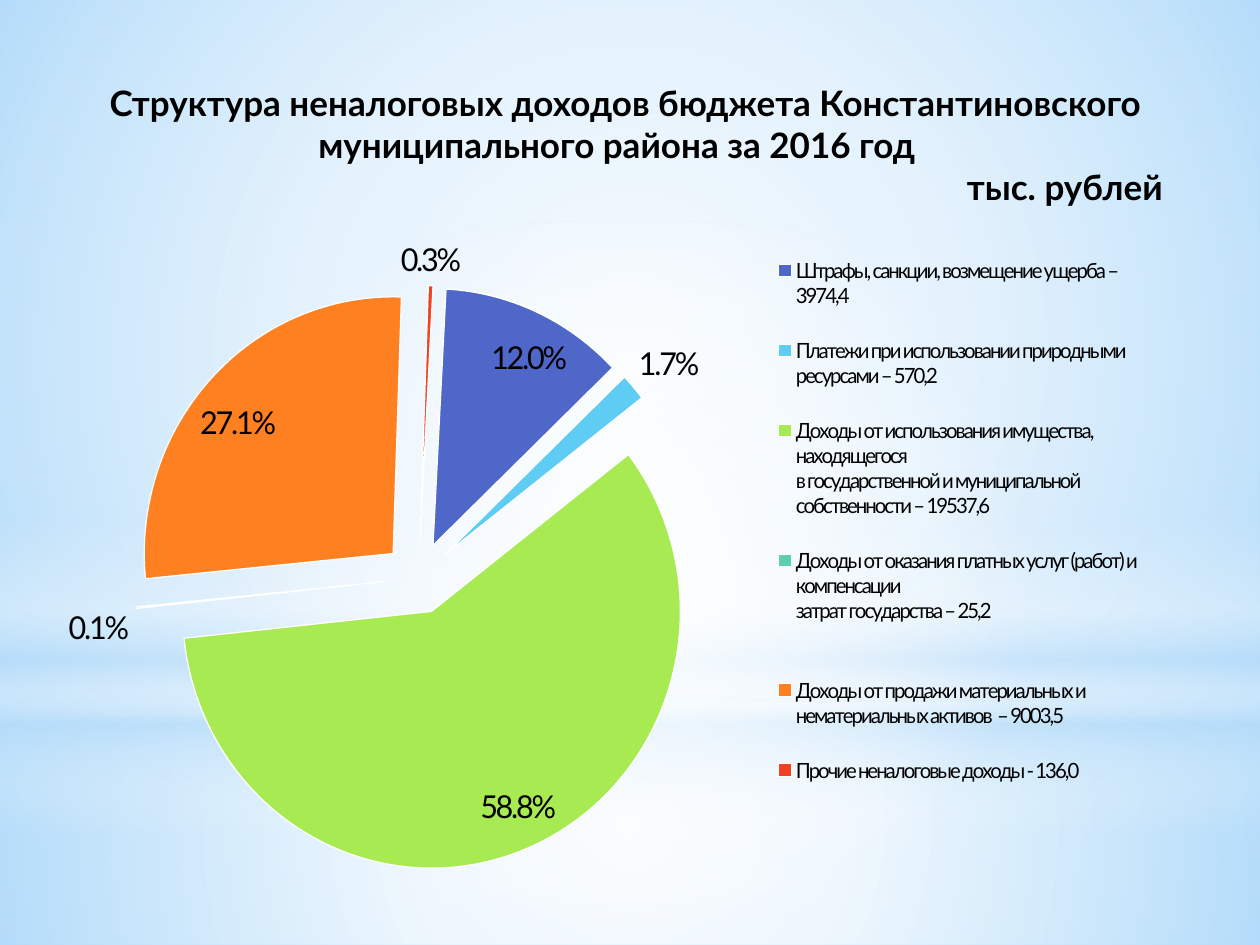
from lxml.etree import SubElement
from pptx import Presentation
from pptx.chart.data import CategoryChartData
from pptx.dml.color import RGBColor
from pptx.enum.chart import XL_CHART_TYPE, XL_LABEL_POSITION, XL_LEGEND_POSITION
from pptx.enum.shapes import MSO_SHAPE
from pptx.enum.text import MSO_ANCHOR, PP_ALIGN
from pptx.oxml import parse_xml
from pptx.oxml.ns import nsdecls, qn
from pptx.util import Pt

BLACK = RGBColor(0x00, 0x00, 0x00)
WHITE = RGBColor(0xFF, 0xFF, 0xFF)
SKY = RGBColor(0xB4, 0xDC, 0xFA)
INDIGO = RGBColor(0x4E, 0x67, 0xC8)
CYAN = RGBColor(0x5E, 0xCC, 0xF3)
LIME = RGBColor(0xA7, 0xEA, 0x52)
TEAL = RGBColor(0x5D, 0xCE, 0xAF)
ORANGE = RGBColor(0xFF, 0x80, 0x21)
RED = RGBColor(0xF1, 0x41, 0x24)

CIRCLE = ('<a:path path="circle"><a:fillToRect l="50000" t="50000" '
          'r="50000" b="50000"/></a:path>')
VERTICAL = '<a:lin ang="5400000" scaled="0"/>'

BACKDROP = [
    (MSO_SHAPE.RECTANGLE, (0, 401.76, 720, 138.24), CIRCLE,
     [(0, WHITE, 91), (37, WHITE, 76), (100, SKY, 79)]),
    (MSO_SHAPE.RECTANGLE, (0, 0, 720, 401.76), CIRCLE,
     [(0, WHITE, 89), (48, WHITE, 62), (100, SKY, 79)]),
    (MSO_SHAPE.RECTANGLE, (0, 296.64, 720, 180), VERTICAL,
     [(0, WHITE, 0), (29, WHITE, 30), (45, SKY, 40),
      (55, WHITE, 26), (65, SKY, 60), (100, WHITE, 0)]),
    (MSO_SHAPE.OVAL, (0, 126, 720, 401.76), CIRCLE,
     [(0, WHITE, 100), (56, WHITE, 0)]),
]

TITLE = [
    ("Структура неналоговых доходов бюджета Константиновского "
     "муниципального района за 2016 год  ", PP_ALIGN.CENTER),
    ("тыс. рублей", PP_ALIGN.RIGHT),
]

INCOME = [
    ("Штрафы, санкции, возмещение ущерба – 3974,4", 12, INDIGO),
    ("Платежи при использовании природными ресурсами – 570,2 ", 1.7, CYAN),
    ("Доходы от использования имущества, находящегося\n"
     "в государственной и муниципальной собственности – 19537,6 ", 58.8, LIME),
    ("Доходы от оказания платных услуг (работ) и компенсации\n"
     "затрат государства – 25,2 \n", 0.1, TEAL),
    ("Доходы от продажи материальных и нематериальных активов  – 9003,5 ",
     27.1, ORANGE),
    ("Прочие неналоговые доходы - 136,0", 0.3, RED),
]


def assign(target, values):
    for name, value in values.items():
        setattr(target, name, value)


def manual_layout(x, y, w, h, inner=False):
    target = '<c:layoutTarget val="inner"/>' if inner else ""
    modes = '<c:xMode val="edge"/><c:yMode val="edge"/>'
    sizes = "".join(f'<c:{key} val="{value}"/>'
                    for key, value in zip("xywh", (x, y, w, h)))
    return parse_xml(f'<c:layout {nsdecls("c")}><c:manualLayout>'
                     f'{target}{modes}{sizes}</c:manualLayout></c:layout>')


def replace_layout(parent, layout, index):
    for old in parent.findall(qn("c:layout")):
        parent.remove(old)
    parent.insert(index, layout)


class SlideBuilder:
    def __init__(self, slide, font_name):
        self.slide = slide
        self.font_name = font_name

    def style(self, font, size, spacing=None, **extra):
        assign(font, {"name": self.font_name, "size": Pt(size), **extra})
        font.color.rgb = BLACK
        if spacing is not None:
            font._rPr.set("spc", str(spacing))

    def glow(self, kind, place, direction, stops):
        shape = self.slide.shapes.add_shape(kind, *map(Pt, place))
        shape.shadow.inherit = False
        shape.line.fill.background()
        marks = "".join(
            f'<a:gs pos="{position * 1000}"><a:srgbClr val="{color}">'
            f'<a:alpha val="{opacity * 1000}"/></a:srgbClr></a:gs>'
            for position, color, opacity in stops)
        gradient = parse_xml(f'<a:gradFill {nsdecls("a")} rotWithShape="1">'
                             f'<a:gsLst>{marks}</a:gsLst>{direction}</a:gradFill>')
        shape._element.spPr.find(qn("a:prstGeom")).addnext(gradient)

    def title(self, lines, place):
        box = self.slide.shapes.title
        self.slide.shapes._spTree.append(box._element)
        assign(box, dict(zip(("left", "top", "width", "height"), map(Pt, place))))
        frame = box.text_frame
        assign(frame, {"word_wrap": True, "vertical_anchor": MSO_ANCHOR.TOP,
                       "margin_left": Pt(36), "margin_right": Pt(36),
                       "margin_top": Pt(3.6), "margin_bottom": Pt(3.6)})
        frame.text = "\n".join(text for text, _ in lines)
        for para, (_, alignment) in zip(frame.paragraphs, lines):
            assign(para, {"alignment": alignment, "line_spacing": 1.0,
                          "space_before": Pt(0), "space_after": Pt(0)})
            for span in para.runs:
                self.style(span.font, 20, bold=True)

    def pie(self, rows, place):
        data = CategoryChartData()
        data.categories = [name for name, _, _ in rows]
        data.add_series("Series 1", [value for _, value, _ in rows])
        chart = self.slide.shapes.add_chart(
            XL_CHART_TYPE.PIE, *map(Pt, place), data).chart
        assign(chart, {"has_title": False, "has_legend": True})
        self.style(chart.font, 18)

        legend = chart.legend
        assign(legend, {"position": XL_LEGEND_POSITION.RIGHT,
                        "include_in_layout": False})
        self.style(legend.font, 12, spacing=-115)
        replace_layout(legend._element, manual_layout(0.64, 0.02, 0.33, 0.86), 1)

        plot = chart.plots[0]
        plot.vary_by_categories = True
        replace_layout(plot._element.getparent(),
                       manual_layout(0.08, 0.09, 0.5, 0.89, inner=True), 0)
        series = plot.series[0]
        series.format.line.color.rgb = WHITE
        explosion = parse_xml(f'<c:explosion {nsdecls("c")} val="14"/>')
        series._element.find(qn("c:spPr")).addnext(explosion)
        for index, (_, _, color) in enumerate(rows):
            piece = series.points[index].format
            piece.fill.solid()
            piece.fill.fore_color.rgb = color
            piece.line.color.rgb = WHITE
            piece.line.width = Pt(0.75)

        labels = series.data_labels
        assign(labels, {"show_percentage": True, "show_value": False,
                        "number_format": "0.0%", "number_format_is_linked": False,
                        "position": XL_LABEL_POSITION.BEST_FIT})
        self.style(labels.font, 18, spacing=-130)
        for old in plot._element.findall(qn("c:firstSliceAng")):
            plot._element.remove(old)
        SubElement(plot._element, qn("c:firstSliceAng")).set("val", "3")


def main():
    deck = Presentation()
    assign(deck, {"slide_width": Pt(720), "slide_height": Pt(540)})
    page = deck.slides.add_slide(deck.slide_layouts[5])
    page.background.fill.solid()
    page.background.fill.fore_color.rgb = SKY
    builder = SlideBuilder(page, "Lato")
    for layer in BACKDROP:
        builder.glow(*layer)
    builder.title(TITLE, (14.4, 43.2, 686.16, 79.92))
    builder.pie(INCOME, (25.2, 122.4, 668.88, 388.8))
    deck.save("out.pptx")


if __name__ == "__main__":
    main()
